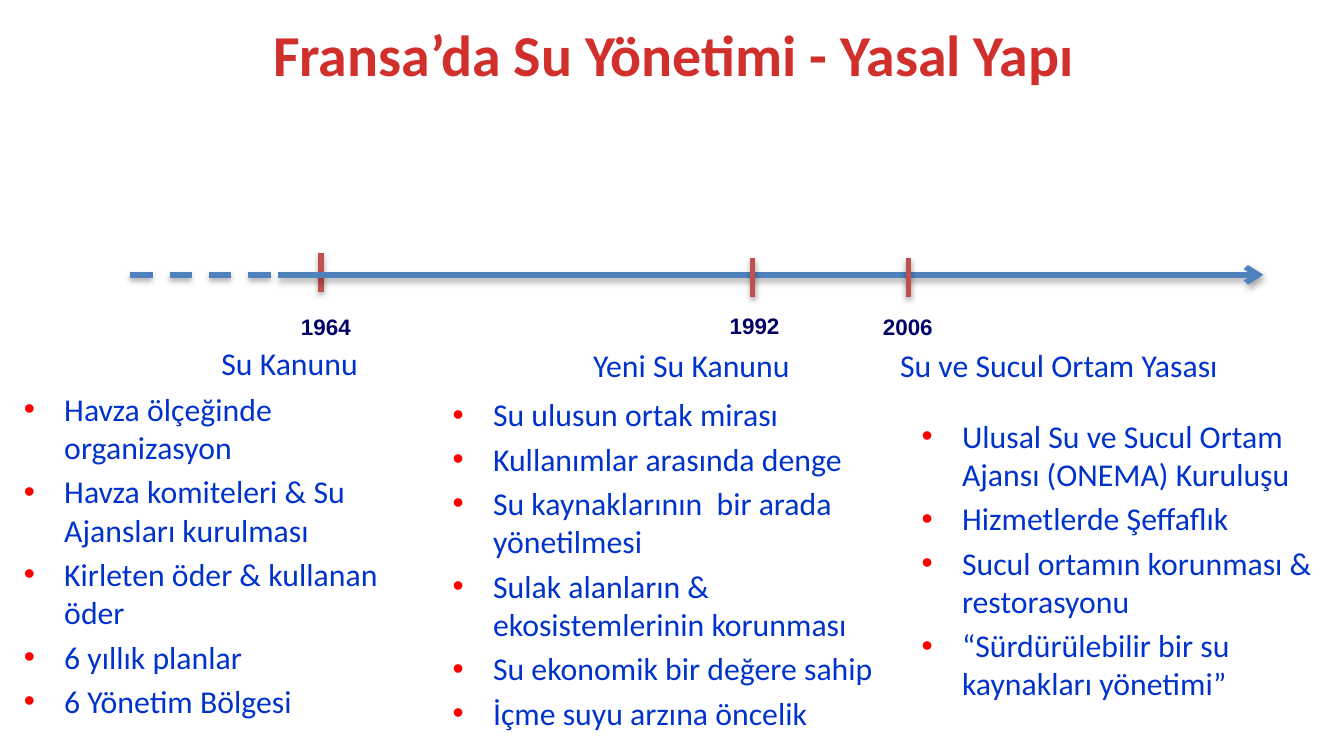
from lxml import etree
from pptx import Presentation, util as u
from pptx.dml.color import RGBColor
from pptx.enum import dml, shapes, text
from pptx.oxml.ns import qn

PX = 4572  # 200 px to the inch
C = {"title": "D02F2C", "year": "000066", "body": "0033CC",
     "bullet": "FF0000", "axis": "4F81BD", "tick": "C0504D"}
TITLE = {"name": "Calibri", "size": u.Pt(31), "bold": True}
YEAR = {"name": "Arial", "size": u.Pt(12), "bold": True}
BODY = {"name": "Calibri", "size": u.Pt(17)}

prs = Presentation()
prs.slide_width, prs.slide_height = 2000 * PX, 1125 * PX
s = prs.slides.add_slide(prs.slide_layouts[6])


def add_text(box, lines, fmt, color, bullets=False):
    sp = s.shapes.add_textbox(*(v * PX for v in box))
    tf = sp.text_frame
    tf.word_wrap = True
    for i, line in enumerate(lines):
        p = tf.paragraphs[0] if i == 0 else tf.add_paragraph()
        p.alignment = text.PP_ALIGN.LEFT if bullets else text.PP_ALIGN.CENTER
        if i:
            p.space_before = u.Pt(3.4)
        if bullets:
            pPr = p._p.get_or_add_pPr()
            pPr.set("marL", str(60 * PX))
            pPr.set("indent", str(-60 * PX))
            clr = etree.SubElement(pPr, qn("a:buClr"))
            etree.SubElement(clr, qn("a:srgbClr"), val=C["bullet"])
            etree.SubElement(pPr, qn("a:buFont"), typeface="Arial")
            etree.SubElement(pPr, qn("a:buChar"), char="•")
        r = p.add_run()
        r.text = line
        for key, value in fmt.items():
            setattr(r.font, key, value)
        r.font.color.rgb = RGBColor.from_string(C[color])
    return tf


def add_line(x1, y1, x2, y2, color):
    ln = s.shapes.add_connector(shapes.MSO_CONNECTOR.STRAIGHT,
                                x1 * PX, y1 * PX, x2 * PX, y2 * PX)
    ln.line.width = u.Pt(3)
    ln.line.color.rgb = RGBColor.from_string(C[color])
    # Soft shadow straight below
    fx = etree.SubElement(ln._element.spPr, qn("a:effectLst"))
    shadow = etree.SubElement(fx, qn("a:outerShdw"), blurRad=str(u.Pt(3.1)),
                              dist=str(u.Pt(1.8)), dir="5400000", rotWithShape="0")
    black = etree.SubElement(shadow, qn("a:srgbClr"), val="000000")
    etree.SubElement(black, qn("a:alpha"), val="35000")
    return ln


# Title
tf = add_text((102, 0, 1800, 160), ["Fransa’da Su Yönetimi - Yasal Yapı"], TITLE, "title")
tf.vertical_anchor = text.MSO_ANCHOR.MIDDLE

# Milestones: tick (x, top), year (left, top), law box, measures box
milestones = [
    ((478, 376), "1964", (398, 456), "Su Kanunu", (232, 502, 398, 76),
     (16, 570, 612, 522),
     ["Havza ölçeğinde organizasyon", "Havza komiteleri & Su Ajansları kurulması",
      "Kirleten öder & kullanan öder", "6 yıllık planlar", "6 Yönetim Bölgesi"]),
    ((1120, 384), "1992", (1036, 454), "Yeni Su Kanunu", (842, 504, 374, 76),
     (654, 578, 698, 534),
     ["Su ulusun ortak mirası", "Kullanımlar arasında denge",
      "Su kaynaklarının  bir arada yönetilmesi",
      "Sulak alanların & ekosistemlerinin korunması",
      "Su ekonomik bir değere sahip", "İçme suyu arzına öncelik"]),
    ((1352, 384), "2006", (1264, 456), "Su ve Sucul Ortam Yasası", (1272, 504, 608, 76),
     (1352, 610, 680, 454),
     ["Ulusal Su ve Sucul Ortam Ajansı (ONEMA) Kuruluşu", "Hizmetlerde Şeffaflık",
      "Sucul ortamın korunması & restorasyonu",
      "“Sürdürülebilir bir su kaynakları yönetimi”"]),
]
for tick, year, year_at, law, law_box, measures_box, measures in milestones:
    add_text((*year_at, 174, 60), [year], YEAR, "year")
    add_text(law_box, [law], BODY, "body")
    add_text(measures_box, measures, BODY, "body", bullets=True)

# Time axis: the first tick lies under it, the others over it
ticks = [(x, y, x, y + 58, "tick") for (x, y), *_ in milestones]
add_line(*ticks[0])
axis = add_line(414, 409, 1880, 409, "axis")
etree.SubElement(axis.line._get_or_add_ln(), qn("a:tailEnd"), type="arrow")
past = add_line(194, 409, 414, 409, "axis")
past.line.dash_style = dml.MSO_LINE.DASH
for tick in ticks[1:]:
    add_line(*tick)

prs.save("out.pptx")
